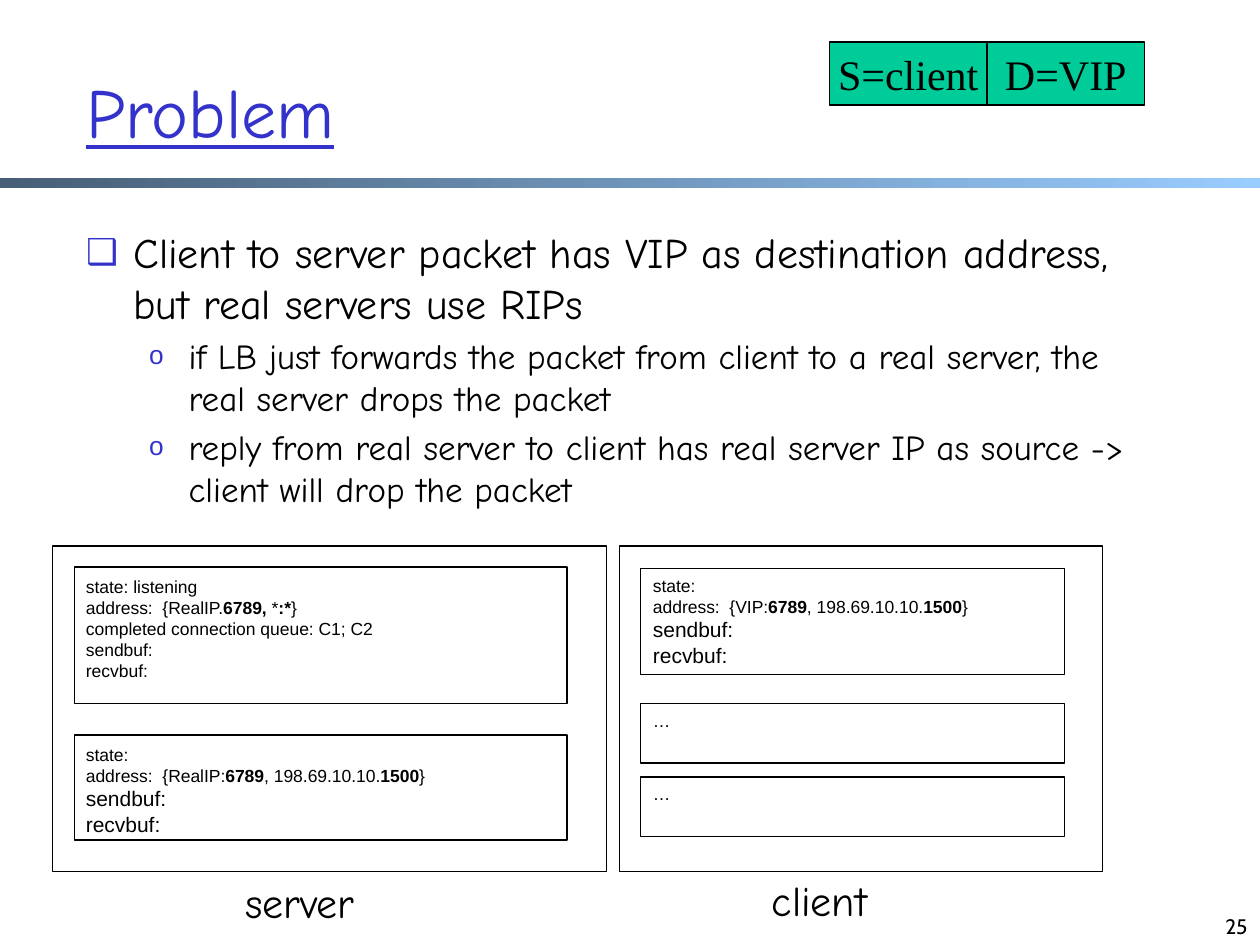
import dataclasses

import pptx
import pptx.dml.color
import pptx.enum.shapes
import pptx.enum.text
import pptx.oxml
import pptx.oxml.ns
import pptx.util

Pt = pptx.util.Pt
Align = pptx.enum.text.PP_ALIGN
Anchor = pptx.enum.text.MSO_ANCHOR
Fit = pptx.enum.text.MSO_AUTO_SIZE
RECT = pptx.enum.shapes.MSO_SHAPE.RECTANGLE


@dataclasses.dataclass(frozen=True)
class Theme:
    """Hold the colours, fonts and type sizes."""
    ink: str = "000000"
    blue: str = "3333CC"
    green: str = "00CC99"
    dark: str = "475E76"
    light: str = "99CCFF"
    hand: str = "Comic Neue"
    sans: str = "Arial"
    serif: str = "Times New Roman"
    page: str = "Cabin"
    head: float = 40
    large: float = 24
    mid: float = 20
    small: float = 12
    tiny: float = 10


def tint(code):
    """Turn a hex code into a colour."""
    return pptx.dml.color.RGBColor.from_string(code)


class Deck:
    """Draw elements on the current slide in one style."""

    def __init__(self, theme):
        """Start a deck with one title and body slide."""
        self.theme = theme
        self.show = pptx.Presentation()
        self.show.slide_width, self.show.slide_height = Pt(720), Pt(540)
        self.slide = self.show.slides.add_slide(self.show.slide_layouts[1])

    def group(self):
        """Open a group and return its shapes."""
        return self.slide.shapes.add_group_shape().shapes

    def place(self, shape, box):
        """Move a shape to a box."""
        shape.left, shape.top, shape.width, shape.height = map(Pt, box)

    def run(self, para, text, font, size, ink=None, bold=None):
        """Add one styled run."""
        run = para.add_run()
        run.text = text
        run.font.name, run.font.size, run.font.bold = font, Pt(size), bold
        run.font.color.rgb = tint(ink or self.theme.ink)
        return run

    def lines(self, frame, rows, font, align=Align.LEFT):
        """Fill a frame with rows of (size, parts), bold on odd parts."""
        for spot, (size, parts) in enumerate(rows):
            para = frame.add_paragraph() if spot else frame.paragraphs[0]
            para.alignment = align
            for turn, part in enumerate(parts):
                for step, line in enumerate(part.split("\n")):
                    if step:
                        para.add_line_break()
                    self.run(para, line, font, size, bold=turn % 2 == 1)

    def rect(self, box, fill=None, home=None):
        """Draw a thin-lined rectangle."""
        shape = (home or self.slide.shapes).add_shape(RECT, *map(Pt, box))
        shape.shadow.inherit = False
        shape.line.color.rgb = tint(self.theme.ink)
        shape.line.width = Pt(0.75)
        if fill:
            shape.fill.solid()
            shape.fill.fore_color.rgb = tint(fill)
        else:
            shape.fill.background()
        return shape

    def card(self, box, rows):
        """Draw a rectangle with state rows at its top."""
        frame = self.rect(box).text_frame
        frame.word_wrap = True
        frame.vertical_anchor = Anchor.TOP
        self.lines(frame, rows, self.theme.sans)

    def tag(self, box, text, home):
        """Draw one packet field."""
        frame = self.rect(box, self.theme.green, home).text_frame
        frame.word_wrap = False
        frame.vertical_anchor = Anchor.MIDDLE
        self.lines(frame, [(self.theme.large, [text])], self.theme.serif, Align.CENTER)

    def label(self, box, rows, font, home=None):
        """Add free text that grows to fit."""
        frame = (home or self.slide.shapes).add_textbox(*map(Pt, box)).text_frame
        frame.word_wrap = False
        frame.auto_size = Fit.SHAPE_TO_FIT_TEXT
        self.lines(frame, rows, font)

    def bar(self, box):
        """Draw the shaded rule under the title."""
        shape = self.rect(box)
        shape.line.fill.background()
        shape.fill.gradient()
        shape.fill.gradient_angle = 0
        ends = (0, self.theme.dark), (1, self.theme.light)
        for stop, (place, code) in zip(shape.fill.gradient_stops, ends):
            stop.position = place
            stop.color.rgb = tint(code)

    def title(self, box, text):
        """Fill the title placeholder."""
        shape = self.slide.shapes.title
        self.place(shape, box)
        frame = shape.text_frame
        frame.auto_size = Fit.NONE
        frame.vertical_anchor = Anchor.MIDDLE
        para = frame.paragraphs[0]
        para.alignment = Align.LEFT
        run = self.run(para, text, self.theme.hand, self.theme.head, self.theme.blue)
        run.font.underline = True

    def bullet(self, para, sign, scale, left, hang):
        """Give a paragraph its bullet and indent."""
        props = para._p.get_or_add_pPr()
        props.set("marL", str(Pt(left)))
        props.set("indent", str(-Pt(hang)))
        space = pptx.oxml.ns.nsdecls("a")
        for tag in (f'<a:buClr {space}><a:srgbClr val="{self.theme.blue}"/></a:buClr>',
                    f'<a:buSzPct {space} val="{scale * 1000}"/>',
                    f'<a:buFont {space} typeface="{self.theme.sans}"/>',
                    f'<a:buChar {space} char="{sign}"/>'):
            props.append(pptx.oxml.parse_xml(tag))

    def body(self, box, items):
        """Fill the body placeholder with (level, text) items."""
        shape = self.slide.placeholders[1]
        self.place(shape, box)
        frame = shape.text_frame
        frame.auto_size = Fit.NONE
        looks = (self.theme.large, "❑", 85, 27, 27), (self.theme.mid, "o", 75, 58.5, 22.5)
        for spot, (level, text) in enumerate(items):
            para = frame.add_paragraph() if spot else frame.paragraphs[0]
            size, *mark = looks[level]
            para.level = level
            self.bullet(para, *mark)
            para.space_before = Pt(size * 0.2)
            self.run(para, text, self.theme.hand, size)

    def number(self, box, text):
        """Add the page number."""
        frame = self.slide.shapes.add_textbox(*map(Pt, box)).text_frame
        frame.word_wrap = True
        frame.vertical_anchor = Anchor.BOTTOM
        self.lines(frame, [(self.theme.small, [text])], self.theme.page, Align.RIGHT)


def socket(theme, host):
    """List the rows of a connected socket."""
    return [(theme.tiny, ["state:"]),
            (theme.tiny, [f"address:  {{{host}:", "6789", ", 198.69.10.10.", "1500", "}"]),
            (theme.small, ["sendbuf:"]),
            (theme.small, ["recvbuf:"])]


def main():
    """Build the slide and save it."""
    theme = Theme()
    deck = Deck(theme)
    deck.bar((0, 101.5, 720, 6))
    deck.title((42, 18, 612, 90), "Problem")
    deck.body((42, 126, 612, 366), [
        (0, "Client to server packet has VIP as destination address, but real servers use RIPs"),
        (1, "if LB just forwards the packet from client to a real server, the real server drops the packet"),
        (1, "reply from real server to client has real server IP as source -> client will drop the packet"),
    ])

    for left, wide in ((30, 316.5), (354, 276)):
        deck.rect((left, 312, wide, 186))

    listen = [(theme.tiny, ["state: listening"]),
              (theme.tiny, ["address:  {RealIP.", "6789, ", "*", ":*", "}"]),
              (theme.tiny, ["completed connection queue: C1; C2 \nsendbuf:"]),
              (theme.tiny, ["recvbuf:"])]
    for top, high, wide, rows in ((324, 78, 182, listen),
                                  (420, 60, 210, socket(theme, "RealIP"))):
        home = deck.group()
        deck.rect((42.5, top, 281.5, high), home=home)
        deck.label((42, top + 1.5, wide, 60), rows, theme.sans, home)

    more = [(theme.tiny, ["…"])]
    for top, high, rows in ((325, 60.5, socket(theme, "VIP")), (402, 34, more), (444, 34, more)):
        deck.card((366, top, 242.5, high), rows)

    packet = deck.group()
    for spot, text in enumerate(("S=client", "D=VIP")):
        deck.tag((474 + 90 * spot, 24, 90, 36), text, packet)

    for left, top, name in ((133, 497.5, "server"), (434, 496, "client")):
        deck.label((left, top, 86, 36), [(theme.large, [name])], theme.hand)
    deck.number((552, 504, 168, 36), "25")
    deck.show.save("out.pptx")


if __name__ == "__main__":
    main()
